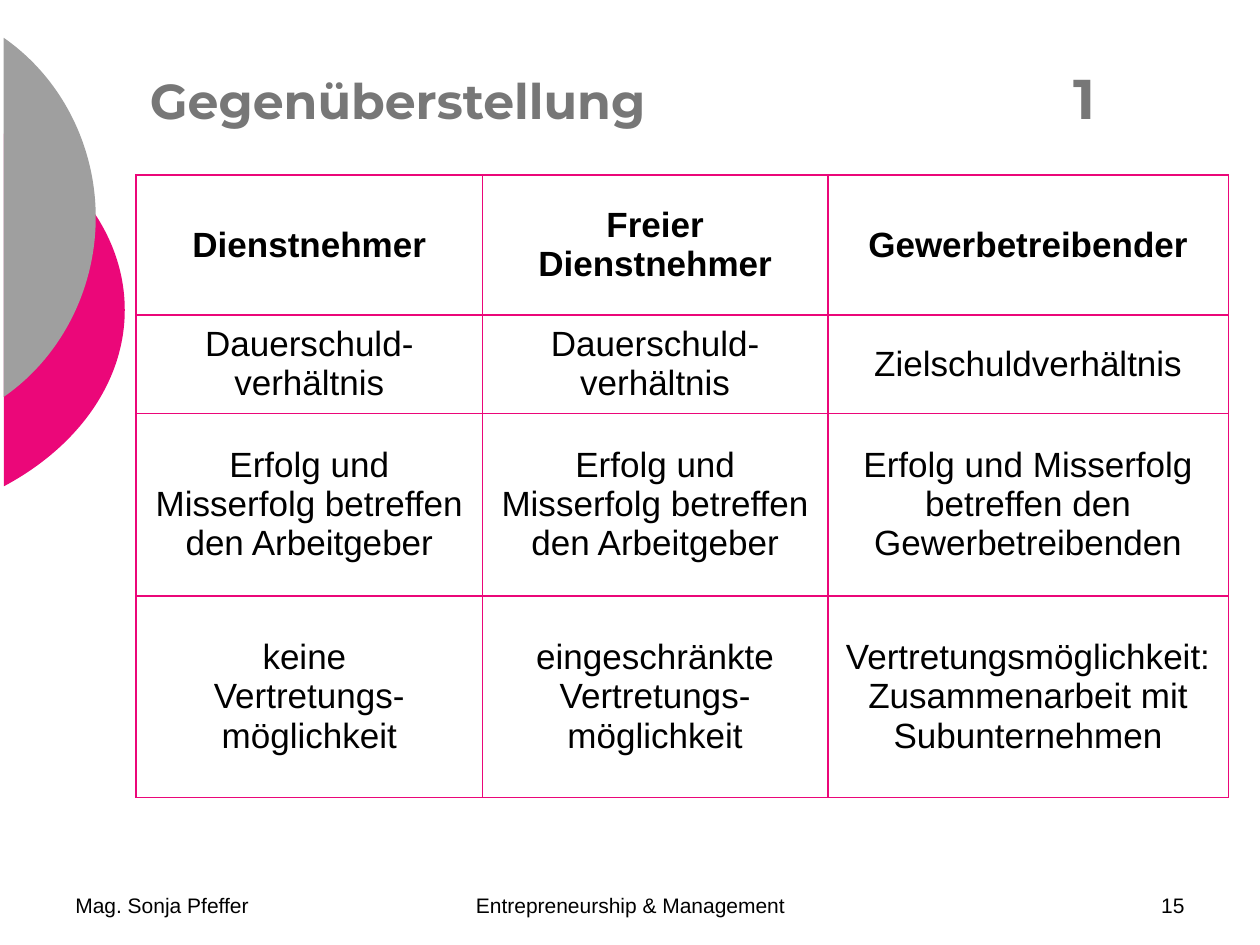
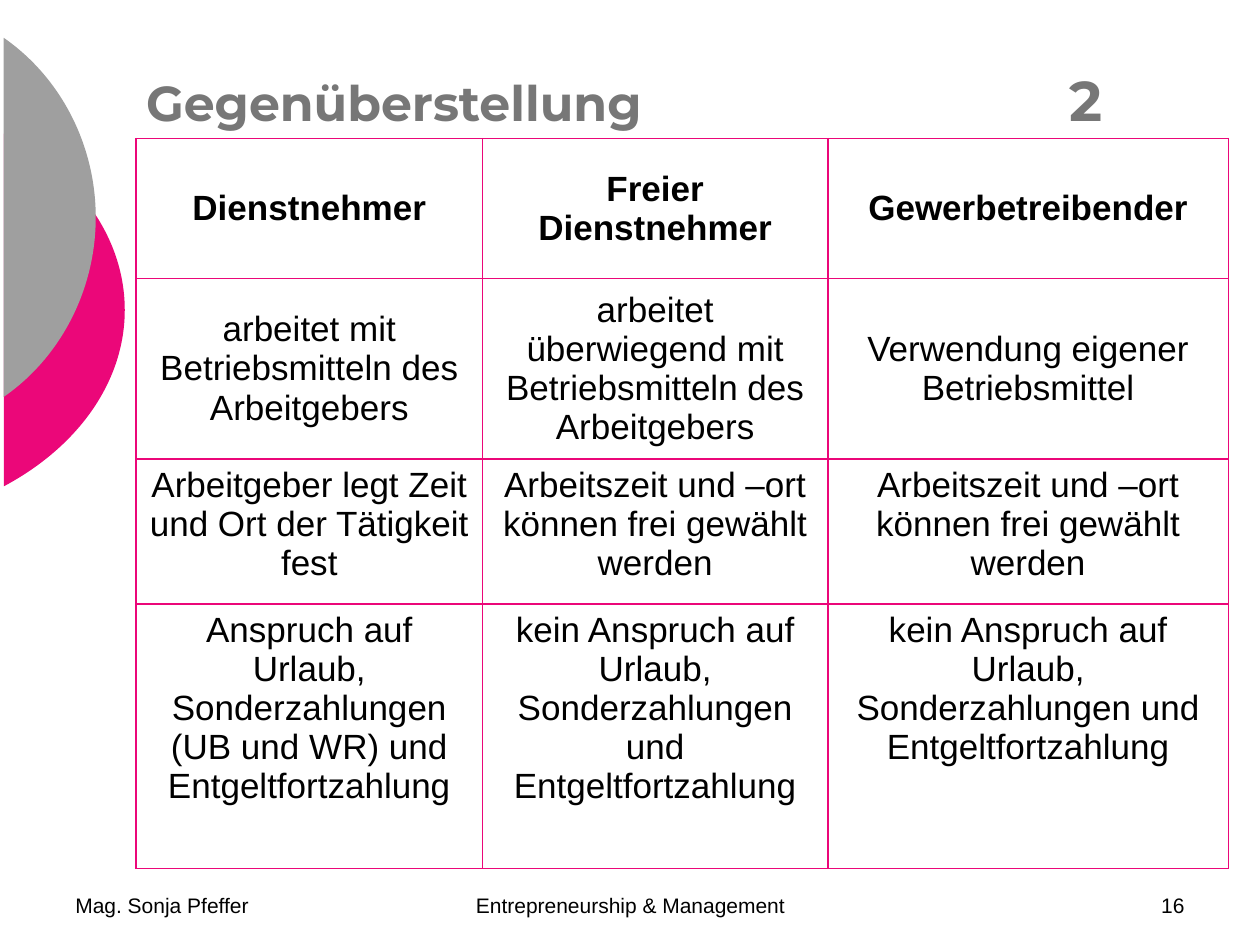
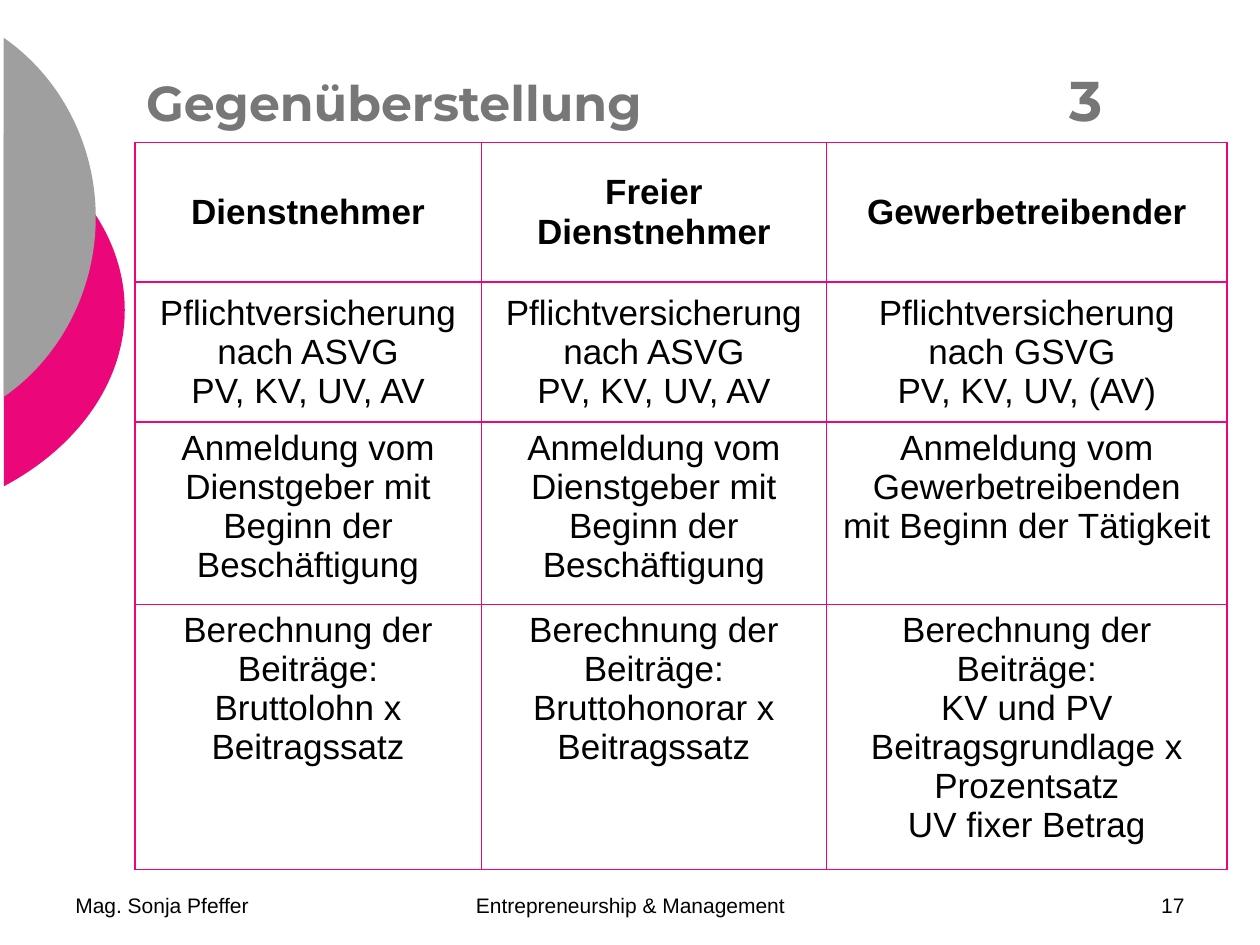
from lxml import etree
from pptx import Presentation
from pptx.dml.color import RGBColor
from pptx.enum import text
from pptx.oxml import ns
from pptx.util import Inches, Pt

PINK, GREY, TITLE_GREY, BLACK = "EB0779", "9F9F9F", "777777", "000000"
BODY_FONT, TITLE_FONT = "Arial", "Montserrat"
ALIGN, ANCHOR = text.PP_ALIGN, text.MSO_ANCHOR
TITLE_ONLY = 5
MOON_EDGE = 0.03
COLUMN_WIDTHS = [2.75, 2.74, 3.18]
HEADINGS = ["Dienstnehmer", "Freier Dienstnehmer", "Gewerbetreibender"]

# In cells, \n starts a paragraph and \v breaks a line.
EMPLOYER_RISK = "Erfolg und Misserfolg betreffen den Arbeitgeber"
FREE_TIME = "Arbeitszeit und –ort können frei gewählt werden"
NO_CLAIM = "kein Anspruch auf Urlaub, Sonderzahlungen und Entgeltfortzahlung"
ASVG = "Pflichtversicherung nach ASVG\vPV, KV, UV, AV"
EMPLOYER_NOTICE = "Anmeldung vom Dienstgeber mit Beginn der Beschäftigung"

COMPARISONS = [
    dict(title_at=(1.09, 0.46), table_at=(1.08, 1.39),
         heights=[1.11, 0.78, 1.45, 1.6], middle_rows=4, rows=[
        ["Dauerschuld-verhältnis", "Dauerschuld-\nverhältnis", "Zielschuldverhältnis"],
        [EMPLOYER_RISK, EMPLOYER_RISK,
         "Erfolg und Misserfolg betreffen den Gewerbetreibenden"],
        ["keine \nVertretungs-\nmöglichkeit",
         "eingeschränkte\nVertretungs-\nmöglichkeit",
         "Vertretungsmöglichkeit:\vZusammenarbeit mit Subunternehmen"],
    ]),
    dict(title_at=(1.06, 0.47), table_at=(1.08, 1.1),
         heights=[1.11, 1.43, 1.15, 2.1], middle_rows=2, rows=[
        ["arbeitet mit Betriebsmitteln des Arbeitgebers",
         "arbeitet überwiegend mit Betriebsmitteln des Arbeitgebers",
         "Verwendung eigener Betriebsmittel"],
        ["Arbeitgeber legt Zeit und Ort der Tätigkeit fest", FREE_TIME, FREE_TIME],
        ["Anspruch auf Urlaub, Sonderzahlungen\n(UB und WR) und Entgeltfortzahlung",
         NO_CLAIM, NO_CLAIM],
    ]),
    dict(title_at=(1.06, 0.47), table_at=(1.07, 1.13),
         heights=[1.11, 1.11, 1.45, 2.1], middle_rows=2, rows=[
        [ASVG, ASVG, "Pflichtversicherung nach GSVG \vPV, KV, UV, (AV)"],
        [EMPLOYER_NOTICE, EMPLOYER_NOTICE,
         "Anmeldung vom Gewerbetreibenden\vmit Beginn der Tätigkeit"],
        ["Berechnung der Beiträge:\nBruttolohn x Beitragssatz",
         "Berechnung der Beiträge:\nBruttohonorar x Beitragssatz",
         "Berechnung der Beiträge:\nKV und PV\vBeitragsgrundlage x\n"
         "Prozentsatz\nUV fixer Betrag"],
    ]),
]


def rgb(color):
    return RGBColor.from_string(color)


def style_font(font, size, name, color, bold=False):
    font.size, font.name, font.bold = Pt(size), name, bold
    font.color.rgb = rgb(color)


def border_cell(cell, color, points):
    properties = cell._tc.get_or_add_tcPr()
    for side in ("lnL", "lnR", "lnT", "lnB"):
        line = etree.SubElement(properties, ns.qn(f"a:{side}"), w=str(Pt(points)))
        fill = etree.SubElement(line, ns.qn("a:solidFill"))
        etree.SubElement(fill, ns.qn("a:srgbClr"), val=color)


class Slides:
    def __init__(self):
        self.deck = Presentation()
        self.deck.slide_width, self.deck.slide_height = Inches(10), Inches(7.5)
        self.page = None

    def add_page(self, number):
        self.page = self.deck.slides.add_slide(self.deck.slide_layouts[TITLE_ONLY])
        self.moon((-3.51, 0.75, 4.5, 3.42), 1.06, (0.63, 1.38), 1.9, PINK)
        self.moon((-2.62, 0, 3.38, 3.45), 0.3, (0.49, 0.62), 1.16, GREY)
        self.footer(0.5, 2.33, "Mag. Sonja Pfeffer", ALIGN.LEFT)
        self.footer(3.42, 3.17, "Entrepreneurship & Management", ALIGN.CENTER)
        self.footer(7.17, 2.33, str(number), ALIGN.RIGHT)

    def moon(self, bounds, start, control, bend, color):
        """Draw an ellipse's part right of MOON_EDGE, mirrored about its middle.

        The upper curve runs from height start through the point control
        and the height bend to the rightmost point.
        """
        left, top, width, height = bounds
        right, total = left + width, 2 * top + height
        corners = [(left, top), (right, top), (right, top + height), (left, top + height)]
        corners = [(Inches(x), Inches(y)) for x, y in corners]
        builder = self.page.shapes.build_freeform(*corners[0])
        builder.add_line_segments(corners[1:], close=True)
        shape = builder.convert_to_shape()
        outline = shape._element.find(".//" + ns.qn("a:path"))
        for step in list(outline):
            outline.remove(step)
        x, y = control
        upper = [control, (right, bend), (right, total / 2)]
        lower = [(right, total - bend), (x, total - y), (MOON_EDGE, total - start)]
        for kind, points in (("moveTo", [(MOON_EDGE, start)]), ("cubicBezTo", upper),
                             ("cubicBezTo", lower), ("close", [])):
            step = etree.SubElement(outline, ns.qn(f"a:{kind}"))
            for x, y in points:
                etree.SubElement(step, ns.qn("a:pt"),
                                 x=str(Inches(x - left)), y=str(Inches(y - top)))
        shape.shadow.inherit = False
        shape.fill.solid()
        shape.fill.fore_color.rgb = rgb(color)
        shape.line.fill.background()

    def footer(self, left, width, words, align):
        box = self.page.shapes.add_textbox(
            Inches(left), Inches(6.83), Inches(width), Inches(0.5))
        frame = box.text_frame
        frame.word_wrap, frame.vertical_anchor = True, ANCHOR.BOTTOM
        para = frame.paragraphs[0]
        para.text, para.alignment = words, align
        style_font(para.font, 12, BODY_FONT, BLACK)

    def title(self, left, top, words, number):
        box = self.page.shapes.title
        box.left, box.top = Inches(left), Inches(top)
        box.width, box.height = Inches(8.52), Inches(0.63)
        frame = box.text_frame
        frame.auto_size = text.MSO_AUTO_SIZE.NONE
        frame.vertical_anchor = ANCHOR.BOTTOM
        para = frame.paragraphs[0]
        para.alignment = ALIGN.LEFT
        tabs = etree.SubElement(para._p.get_or_add_pPr(), ns.qn("a:tabLst"))
        etree.SubElement(tabs, ns.qn("a:tab"), pos=str(Inches(7.33)), algn="l")
        for part, size in ((words + "\t", 28), (str(number), 32)):
            span = para.add_run()
            span.text = part
            style_font(span.font, size, TITLE_FONT, TITLE_GREY, bold=True)

    def table(self, left, top, heights, rows, middle_rows):
        """Add a table whose first middle_rows rows are centred vertically."""
        table = self.page.shapes.add_table(
            len(rows), len(COLUMN_WIDTHS), Inches(left), Inches(top),
            Inches(sum(COLUMN_WIDTHS)), Inches(sum(heights))).table
        table.first_row = table.horz_banding = False
        for column, width in zip(table.columns, COLUMN_WIDTHS):
            column.width = Inches(width)
        for r, (height, row) in enumerate(zip(heights, rows)):
            table.rows[r].height = Inches(height)
            for c, words in enumerate(row):
                cell = table.cell(r, c)
                cell.text = words
                cell.vertical_anchor = ANCHOR.MIDDLE if r < middle_rows else ANCHOR.TOP
                border_cell(cell, PINK, 1)
                cell.fill.background()
                for para in cell.text_frame.paragraphs:
                    para.alignment = ALIGN.CENTER
                    style_font(para.font, 20, BODY_FONT, BLACK, bold=r == 0)


def main():
    slides = Slides()
    for number, part in enumerate(COMPARISONS, start=1):
        slides.add_page(14 + number)
        slides.table(*part["table_at"], part["heights"],
                     [HEADINGS] + part["rows"], part["middle_rows"])
        slides.title(*part["title_at"], "Gegenüberstellung", number)
    slides.deck.save("out.pptx")


if __name__ == "__main__":
    main()
